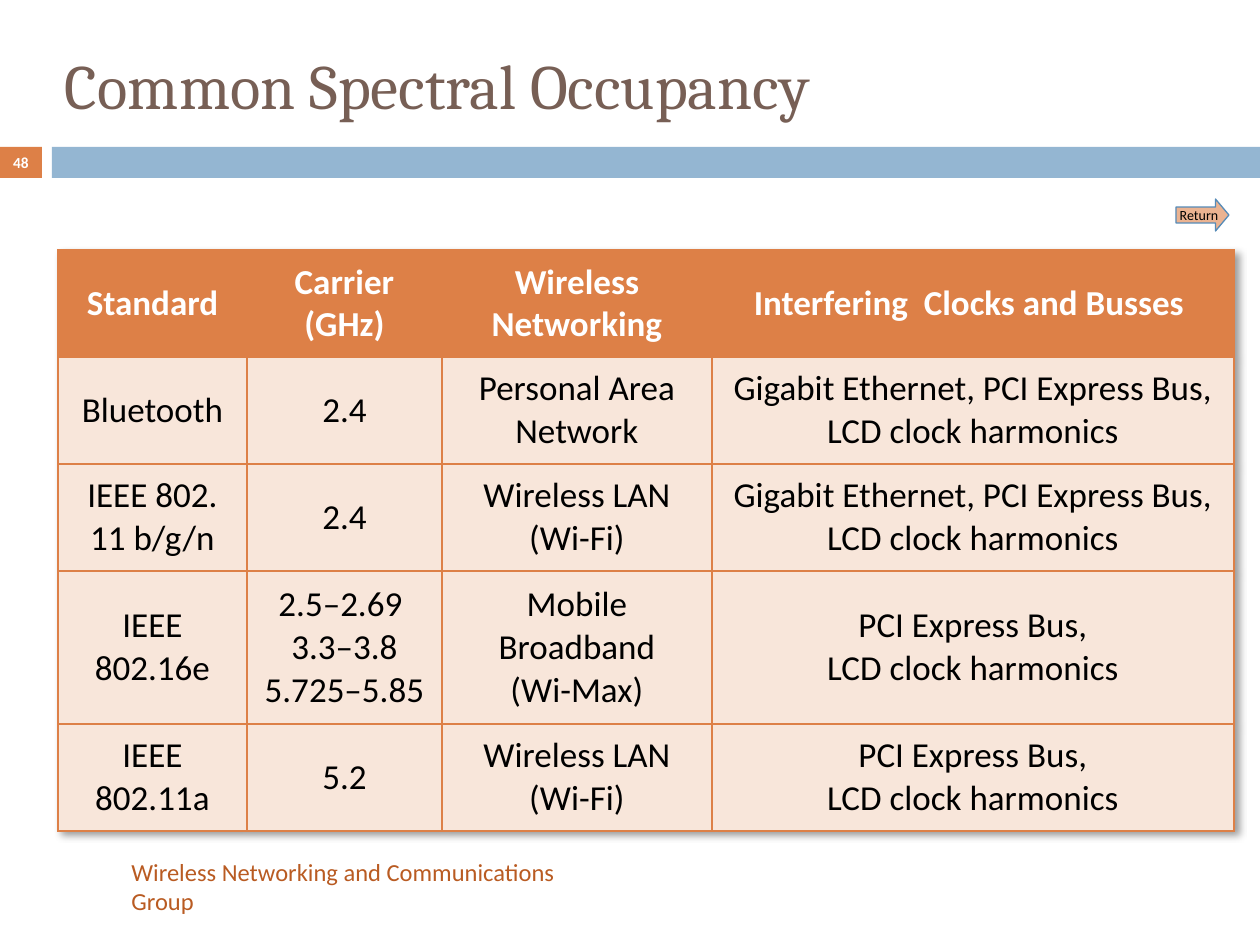
import dataclasses
import typing

import lxml.etree
import pptx
import pptx.dml.color
import pptx.enum.shapes
import pptx.enum.text
import pptx.oxml
import pptx.oxml.ns
import pptx.util

RGB = pptx.dml.color.RGBColor
KIND = pptx.enum.shapes.MSO_SHAPE
ALIGN = pptx.enum.text.PP_ALIGN
MIDDLE = pptx.enum.text.MSO_ANCHOR.MIDDLE
SCALE = 914400 / 126

ORANGE = RGB(0xDD, 0x80, 0x47)
BLUE = RGB(0x94, 0xB6, 0xD2)
EDGE = RGB(0x55, 0x8B, 0xB8)
PEACH = RGB(0xEB, 0xB3, 0x91)
CREAM = RGB(0xF8, 0xE6, 0xDA)
RUST = RGB(0xB9, 0x5B, 0x22)
BROWN = RGB(0x77, 0x5F, 0x55)
WHITE = RGB(0xFF, 0xFF, 0xFF)
BLACK = RGB(0, 0, 0)

SHADOW = """<a:effectLst %s><a:outerShdw blurRad="50800" dist="38100" dir="2700000"
 algn="tl" rotWithShape="0"><a:srgbClr val="000000"><a:alpha val="40000"/></a:srgbClr>
</a:outerShdw></a:effectLst>""" % pptx.oxml.ns.nsdecls("a")

COLS = (189, 195, 270, 522)
ROWS = (107, 107, 107, 153, 107)
GIGABIT = "Gigabit Ethernet, PCI Express Bus, LCD clock harmonics"
EXPRESS = "PCI Express Bus,\vLCD clock harmonics"
LAN = "Wireless LAN (Wi-Fi)"
CELLS = (
    ("Standard", "Carrier (GHz)", "Wireless Networking", "Interfering  Clocks and Busses "),
    ("Bluetooth", "2.4", "Personal Area Network", GIGABIT),
    ("IEEE 802. 11 b/g/n", "2.4", LAN, GIGABIT),
    ("IEEE 802.16e", "2.5–2.69 \v3.3–3.8\n5.725–5.85", "Mobile Broadband\v(Wi-Max)", EXPRESS),
    ("IEEE 802.11a", "5.2", LAN, EXPRESS),
)


@dataclasses.dataclass(frozen=True)
class Style:
    size: float
    color: RGB
    name: str = "Calibri"
    bold: bool = False
    align: ALIGN = ALIGN.CENTER


@dataclasses.dataclass(frozen=True)
class Box:
    left: int
    top: int
    width: int
    height: int
    kind: KIND = KIND.RECTANGLE
    fill: typing.Optional[RGB] = None
    line: typing.Optional[RGB] = None
    text: str = ""
    style: typing.Optional[Style] = None
    inset: int = 13
    wrap: bool = True
    adjust: tuple[float, ...] = ()


BOXES = (
    Box(0, 147, 42, 31, fill=ORANGE),
    Box(52, 147, 1208, 31, fill=BLUE),
    Box(116, 861, 514, 50, KIND.ROUNDED_RECTANGLE, style=Style(14, RUST, align=ALIGN.LEFT),
        text="Wireless Networking and Communications Group"),
    Box(52, 32, 1176, 105, text="Common Spectral Occupancy",
        style=Style(36, BROWN, "Cambria", align=ALIGN.LEFT)),
    Box(0, 145, 42, 34, text="48", style=Style(8.8, WHITE, bold=True), inset=0),
    Box(1176, 199, 53, 32, KIND.RIGHT_ARROW, PEACH, EDGE, "Return", Style(8, BLACK),
        wrap=False, adjust=(0.5, 0.42)),
)


def emu(px: int) -> int:
    return round(px * SCALE)


def write(frame, text: str, style: Style) -> None:
    frame.text = text
    look = {"size": pptx.util.Pt(style.size), "name": style.name, "bold": style.bold}
    for para in frame.paragraphs:
        para.alignment = style.align
        for run in para.runs:
            for key, value in look.items():
                setattr(run.font, key, value)
            run.font.color.rgb = style.color


def draw(slide, box: Box) -> None:
    place = map(emu, (box.left, box.top, box.width, box.height))
    shape = slide.shapes.add_shape(box.kind, *place)
    shape.shadow.inherit = False
    for index, value in enumerate(box.adjust):
        shape.adjustments[index] = value
    for part, color in ((shape.fill, box.fill), (shape.line.fill, box.line)):
        if color is None:
            part.background()
        else:
            part.solid()
            part.fore_color.rgb = color
    if box.line is not None:
        shape.line.width = pptx.util.Pt(0.75)
    if box.style is not None:
        frame = shape.text_frame
        side = emu(box.inset)
        form = {"word_wrap": box.wrap, "vertical_anchor": MIDDLE,
                "margin_left": side, "margin_right": side,
                "margin_top": side // 2, "margin_bottom": side // 2}
        for key, value in form.items():
            setattr(frame, key, value)
        write(frame, box.text, box.style)


def border(cell, color: RGB) -> None:
    """Put a one-point line on all four sides, ahead of the cell's fill."""
    props = cell._tc.get_or_add_tcPr()
    for index, side in enumerate(("lnL", "lnR", "lnT", "lnB")):
        line = lxml.etree.Element(pptx.oxml.ns.qn(f"a:{side}"), w="12700")
        fill = lxml.etree.SubElement(line, pptx.oxml.ns.qn("a:solidFill"))
        lxml.etree.SubElement(fill, pptx.oxml.ns.qn("a:srgbClr"), val=str(color))
        props.insert(index, line)


def grid(slide, left: int, top: int) -> None:
    """Draw the table of standards."""
    place = map(emu, (left, top, sum(COLS), sum(ROWS)))
    table = slide.shapes.add_table(len(ROWS), len(COLS), *place).table
    table.horz_banding = False
    table._tbl.tblPr.insert(0, pptx.oxml.parse_xml(SHADOW))
    for col, width in zip(table.columns, COLS):
        col.width = emu(width)
    for r, (height, texts) in enumerate(zip(ROWS, CELLS)):
        table.rows[r].height = emu(height)
        head = r == 0
        style = Style(20, WHITE if head else BLACK, bold=head)
        for c, text in enumerate(texts):
            cell = table.cell(r, c)
            cell.vertical_anchor = MIDDLE
            cell.fill.solid()
            cell.fill.fore_color.rgb = ORANGE if head else CREAM
            border(cell, ORANGE)
            write(cell.text_frame, text, style)


def main() -> None:
    deck = pptx.Presentation()
    deck.slide_width, deck.slide_height = emu(1260), emu(945)
    slide = deck.slides.add_slide(deck.slide_layouts[6])
    *base, arrow = BOXES
    for box in base:
        draw(slide, box)
    grid(slide, 58, 250)
    draw(slide, arrow)
    deck.save("out.pptx")


if __name__ == "__main__":
    main()
